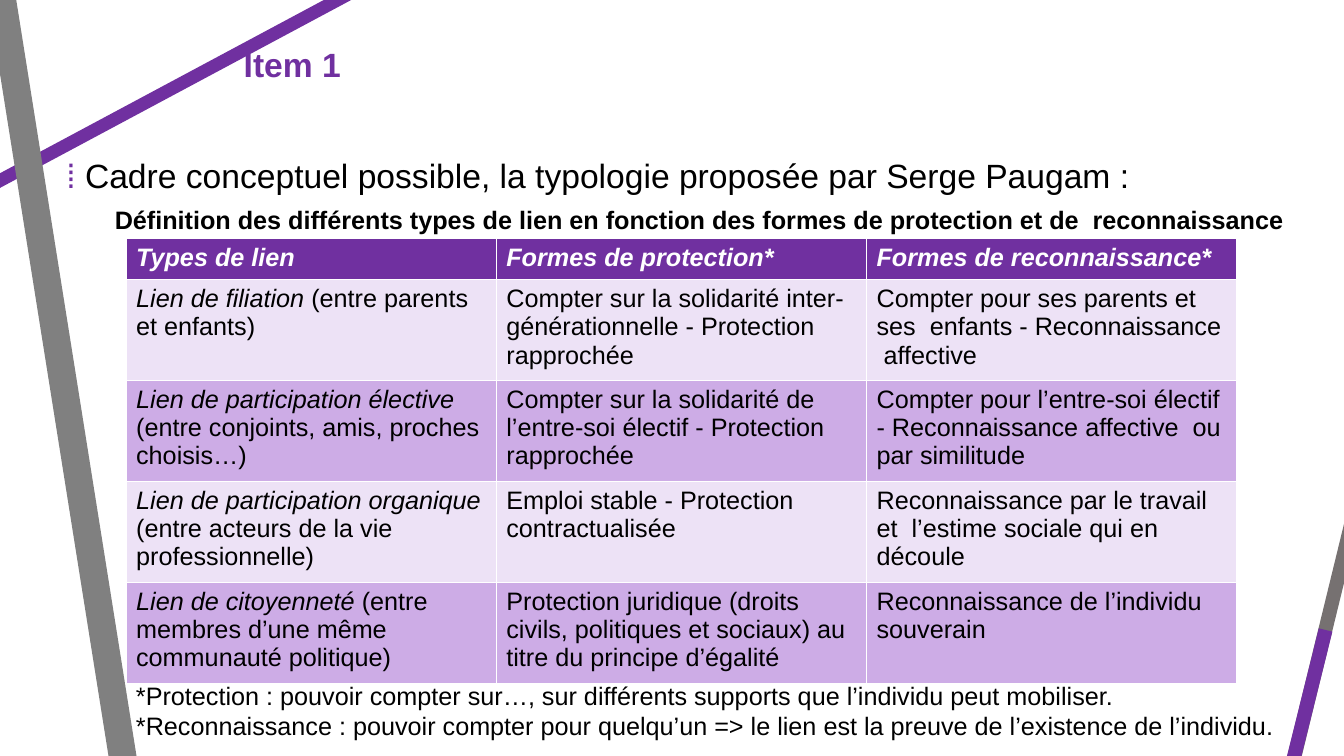
"""Build the slide on types of social bond: title, lead, table and notes."""
from lxml import etree
from pptx import Presentation
from pptx import dml, util as u
from pptx.dml import color
from pptx.enum import shapes, text
from pptx.oxml import ns

PURPLE, GREY, STONE = "7030A0", "808080", "767171"
BLACK, WHITE = "000000", "FFFFFF"
BANDS = ["EDE2F6", "CDACE6"]

deck = Presentation()
deck.slide_width, deck.slide_height = u.Inches(13.33), u.Inches(7.5)
COL, ROW = deck.slide_width / 100, deck.slide_height / 100
slide = deck.slides.add_slide(deck.slide_layouts[6])


def paint(item, tint):
    """Give a fill, line fill or font its solid colour."""
    fill = item.fill if hasattr(item, "fill") else item
    fill.solid()
    fill.fore_color.rgb = color.RGBColor.from_string(tint)


def write(para, parts, size, tint=BLACK, bold=False):
    """Add the parts as runs and style the paragraph."""
    for part in parts:
        para.add_run().text = part
    para.font.name, para.font.size, para.font.bold = "Arial", u.Pt(size), bold
    paint(para.font, tint)
    for run in para.runs:
        run.font.name, run.font.size, run.font.bold = "Arial", u.Pt(size), bold
        paint(run.font, tint)


bars = [
    (-15.68, 38.8, 38.7, -12.93, PURPLE, 9.25),
    (0, -1.87, 9.45, 103.73, GREY, 19.75),
    (91.95, 131.87, 102.38, 55.87, STONE, 10),
    (91.35, 135.33, 98.63, 83.33, PURPLE, 10),
]
for left, top, right, low, tint, width in bars:
    bar = slide.shapes.add_connector(
        shapes.MSO_CONNECTOR.STRAIGHT,
        int(left * COL), int(top * ROW), int(right * COL), int(low * ROW))
    paint(bar.line, tint)
    bar.line.width = u.Pt(width)
    etree.SubElement(bar._element.spPr, ns.qn("a:effectLst"))

LEFT = text.PP_ALIGN.LEFT
CENTER = text.PP_ALIGN.CENTER
boxes = [
    (17.4, 5.2, 81.6, 6.67, 24, PURPLE, True, LEFT, 6, [["Item 1"]]),
    (4.2, 19.87, 95.03, 6.67, 24, BLACK, False, LEFT, 6,
     [["⁞ ", "Cadre conceptuel possible, la typologie proposée par Serge Paugam :"]]),
    (4.2, 26.4, 95.7, 5.33, 18, BLACK, True, CENTER, 0,
     [["Définition des différents types de lien en fonction des formes de "
       "protection et de  reconnaissance"]]),
    (9.38, 89.33, 86.7, 9.47, 18, BLACK, False, LEFT, 0,
     [["*Protection : pouvoir compter sur…, sur différents supports que "
       "l’individu peut mobiliser."],
      ["*Reconnaissance : pouvoir compter pour quelqu’un => le lien est la "
       "preuve de l’existence de l’individu."]]),
]
for left, top, width, height, size, tint, bold, align, gap, lines in boxes:
    frame = slide.shapes.add_textbox(
        int(left * COL), int(top * ROW),
        int(width * COL), int(height * ROW)).text_frame
    frame.word_wrap = True
    frame.auto_size = text.MSO_AUTO_SIZE.SHAPE_TO_FIT_TEXT
    for n, parts in enumerate(lines):
        para = frame.add_paragraph() if n else frame.paragraphs[0]
        para.alignment, para.space_before = align, u.Pt(gap)
        write(para, parts, size, tint, bold)
        if len(parts) > 1:
            paint(para.runs[0].font, PURPLE)

heads = ["Types de lien", "Formes de protection*", "Formes de reconnaissance*"]
bonds = [
    (["Lien de filiation", " (entre parents et enfants)"],
     ["Compter sur la solidarité inter-générationnelle - Protection  rapprochée"],
     ["Compter pour ses parents et ses  enfants - Reconnaissance  affective"]),
    (["Lien de participation élective ", "(entre conjoints, amis, proches choisis…)"],
     ["Compter sur la solidarité de l’entre-soi électif - Protection rapprochée"],
     ["Compter pour l’entre-soi électif - Reconnaissance affective  ou par similitude"]),
    (["Lien de participation organique ", "(entre acteurs de la vie professionnelle)"],
     ["Emploi stable - Protection contractualisée"],
     ["Reconnaissance par le travail et  l’estime sociale qui en découle"]),
    (["Lien de citoyenneté ", "(entre  membres d’une même  communauté politique)"],
     ["Protection juridique (droits civils, politiques et sociaux) au titre du "
      "principe d’égalité"],
     ["Reconnaissance de l’individu  souverain"]),
]
rows = [[[head] for head in heads], *bonds]
grid = slide.shapes.add_table(
    len(rows), len(heads), int(9.38 * COL), int(31.6 * ROW),
    int(82.65 * COL), int(58.8 * ROW)).table
for column in grid.columns:
    column.width = int(27.55 * COL)
for r, cells in enumerate(rows):
    grid.rows[r].height = int((13.35 if r else 5.4) * ROW)
    for c, parts in enumerate(cells):
        cell = grid.cell(r, c)
        paint(cell, BANDS[(r - 1) % 2] if r else PURPLE)
        para = cell.text_frame.paragraphs[0]
        write(para, parts, 18, BLACK if r else WHITE, not r)
        para.runs[0].font.italic = r == 0 or c == 0

deck.save("out.pptx")
